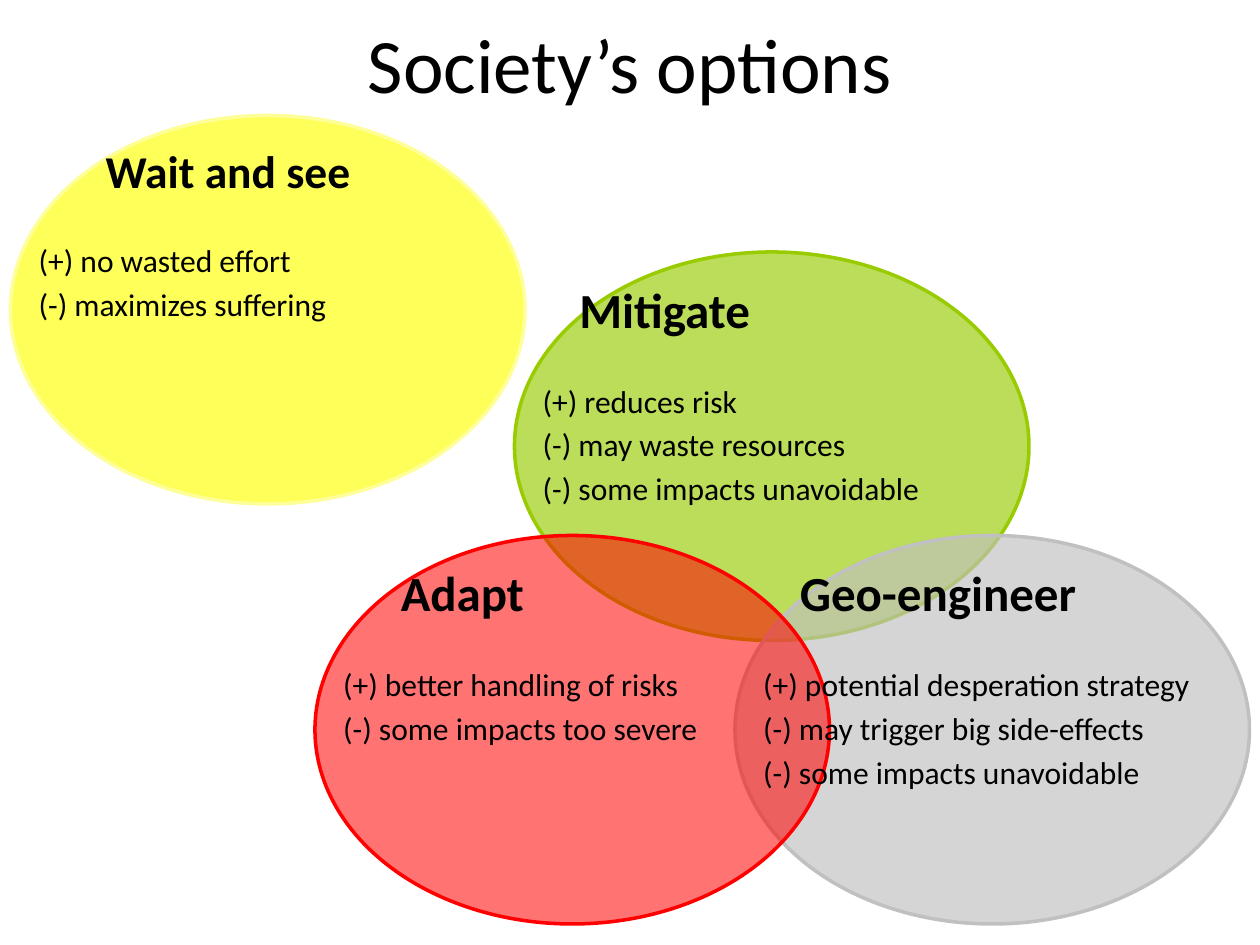
from collections import namedtuple

from pptx import Presentation
from pptx.dml.color import RGBColor
from pptx.enum.shapes import MSO_SHAPE
from pptx.enum.text import MSO_ANCHOR, PP_ALIGN
from pptx.oxml.ns import qn
from pptx.util import Emu, Pt
from lxml.etree import SubElement

FONT = "Calibri"
BLACK = RGBColor(0x00, 0x00, 0x00)
YELLOW = RGBColor(0xFF, 0xFF, 0x00)
PALE_YELLOW = RGBColor(0xFF, 0xFF, 0x99)
GREEN = RGBColor(0x99, 0xCC, 0x00)
GRAY = RGBColor(0xC0, 0xC0, 0xC0)
RED = RGBColor(0xFF, 0x00, 0x00)

OVAL_WIDTH, OVAL_HEIGHT = 392, 296
TEXT_DROP = 16  # from the top of an oval to its text box
POINT_INDENT = 12

Option = namedtuple("Option", "left top fill opacity line heading size indent points")

WAIT = Option(8, 88, YELLOW, 65, PALE_YELLOW, "Wait and see", 26, 63,
              ["(+) no wasted effort", "(-) maximizes suffering"])
MITIGATE = Option(392, 192, GREEN, 65, GREEN, "Mitigate", 28, 40,
                  ["(+) reduces risk", "(-) may waste resources",
                   "(-) some impacts unavoidable"])
ADAPT = Option(240, 408, RED, 55, RED, "Adapt", 28, 56,
               ["(+) better handling of risks", "(-) some impacts too severe"])
GEO = Option(560, 408, GRAY, 65, GRAY, "Geo-engineer", 28, 40,
             ["(+) potential desperation strategy",
              "(-) may trigger big side-effects",
              "(-) some impacts unavoidable"])


def px(count):
    return Emu(count * 9525)


def add_box(page, left, top, width, height):
    box = page.shapes.add_textbox(px(left), px(top), px(width), px(height))
    box.text_frame.word_wrap = True
    return box.text_frame


def style(paragraph, size, bold=False, indent=0, before=0):
    paragraph._p.get_or_add_pPr().set("marL", str(px(indent)))
    paragraph.space_before = Pt(before)
    for span in paragraph.runs:
        span.font.name = FONT
        span.font.size = Pt(size)
        span.font.bold = bold
        span.font.color.rgb = BLACK


def add_title(page, text):
    frame = add_box(page, 72, 8, 816, 80)
    frame.vertical_anchor = MSO_ANCHOR.MIDDLE
    frame.text = text
    frame.paragraphs[0].alignment = PP_ALIGN.CENTER
    style(frame.paragraphs[0], 44)


def add_oval(page, option):
    oval = page.shapes.add_shape(MSO_SHAPE.OVAL, px(option.left), px(option.top),
                                 px(OVAL_WIDTH), px(OVAL_HEIGHT))
    oval.shadow.inherit = False
    oval.fill.solid()
    oval.fill.fore_color.rgb = option.fill
    color = oval._element.spPr.find(qn("a:solidFill"))[0]
    SubElement(color, qn("a:alpha")).set("val", str(option.opacity * 1000))
    oval.line.color.rgb = option.line
    oval.line.width = Pt(2)


def add_option_text(page, option):
    frame = add_box(page, option.left, option.top + TEXT_DROP,
                    OVAL_WIDTH, OVAL_HEIGHT - TEXT_DROP)
    frame.text = "\n".join([option.heading, *option.points])
    heading, *points = frame.paragraphs
    style(heading, option.size, bold=True, indent=option.indent)
    for index, point in enumerate(points):
        # A wide gap sets the points off from the heading
        style(point, 18, indent=POINT_INDENT, before=3.4 if index else 25)


def main():
    deck = Presentation()
    deck.slide_width, deck.slide_height = px(960), px(720)
    page = deck.slides.add_slide(deck.slide_layouts[6])

    add_title(page, "Society’s options")

    # Upper options
    for option in (WAIT, MITIGATE):
        add_oval(page, option)
        add_option_text(page, option)

    # Lower options overlap, so both texts lie above both ovals
    for option in (GEO, ADAPT):
        add_oval(page, option)
    for option in (ADAPT, GEO):
        add_option_text(page, option)

    deck.save("out.pptx")


if __name__ == "__main__":
    main()
